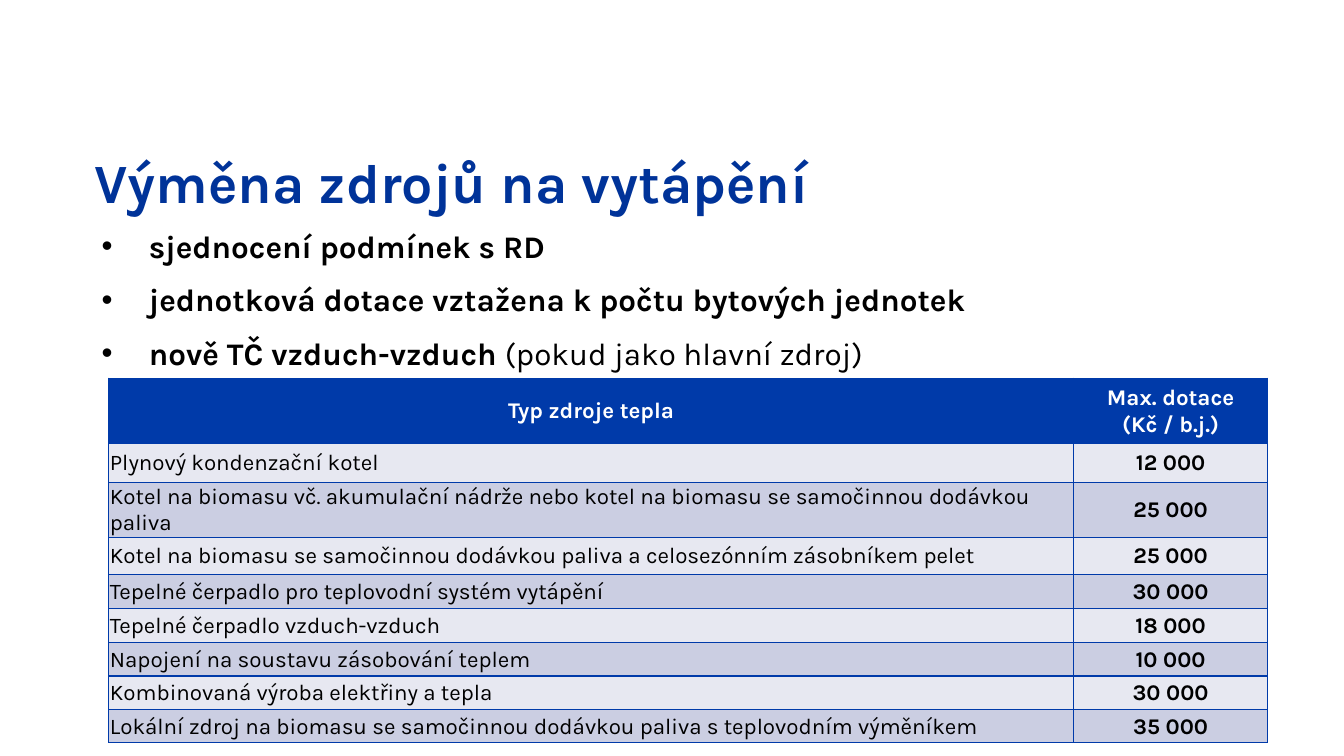
"""Builds a slide on heating source replacement with a table of grants."""
from lxml.etree import SubElement
from pptx import Presentation
from pptx.dml.color import RGBColor
from pptx.enum.text import MSO_ANCHOR as Anchor, MSO_AUTO_SIZE as AutoSize, PP_ALIGN as Align
from pptx.oxml import parse_xml
from pptx.oxml.ns import nsdecls, qn
from pptx.util import Cm, Pt

TITLE_BLUE = RGBColor(0x00, 0x33, 0x99)
TABLE_BLUE = RGBColor(0x00, 0x3A, 0xA9)
LIGHT_BAND = RGBColor(0xE7, 0xE8, 0xF1)
DARK_BAND = RGBColor(0xCB, 0xCE, 0xE2)
WHITE = RGBColor(0xFF, 0xFF, 0xFF)
BLACK = RGBColor(0x00, 0x00, 0x00)


def set_font(font, size, color, bold):
    for key, value in {"name": "Karla", "size": Pt(size), "bold": bold}.items():
        setattr(font, key, value)
    font.color.rgb = color


def add_borders(cell):
    for index, side in enumerate(("lnL", "lnR", "lnT", "lnB")):
        border = parse_xml(
            f'<a:{side} {nsdecls("a")} w="{Pt(1)}"><a:solidFill>'
            f'<a:srgbClr val="{TABLE_BLUE}"/></a:solidFill></a:{side}>'
        )
        cell._tc.get_or_add_tcPr().insert(index, border)


prs = Presentation()
prs.slide_width, prs.slide_height = Cm(33.87), Cm(19.05)
slide = prs.slides.add_slide(prs.slide_layouts[5])

heading = slide.shapes.title
heading_place = {"left": Cm(2.13), "top": Cm(3.6), "width": Cm(29.21), "height": Cm(1.4)}
for key, value in heading_place.items():
    setattr(heading, key, value)
heading.text_frame.text = "Výměna zdrojů na vytápění"
heading_format = {"vertical_anchor": Anchor.TOP, "auto_size": AutoSize.NONE, "word_wrap": True}
for key, value in heading_format.items():
    setattr(heading.text_frame, key, value)
heading_line = heading.text_frame.paragraphs[0]
heading_line.alignment = Align.LEFT
set_font(heading_line.runs[0].font, 39.6, TITLE_BLUE, True)

conditions = [
    ("sjednocení podmínek s RD", ""),
    ("jednotková dotace vztažena k počtu bytových jednotek", ""),
    ("nově TČ vzduch-vzduch", " (pokud jako hlavní zdroj)"),
]
conditions_frame = slide.shapes.add_textbox(Cm(2.31), Cm(5.6), Cm(29.21), Cm(3.99)).text_frame
conditions_frame.word_wrap = True
for index, (key_point, remark) in enumerate(conditions):
    line = conditions_frame.add_paragraph() if index else conditions_frame.paragraphs[0]
    line_properties = line._p.get_or_add_pPr()
    line_properties.set("marL", str(Cm(1.19)))
    line_properties.set("indent", str(-Cm(1.19)))
    SubElement(line_properties, qn("a:buFont"), typeface="Arial")
    SubElement(line_properties, qn("a:buChar"), char="•")
    line.space_before = Pt(5.3 if index else 0)
    line.space_after = Pt(6)
    for text, bold in ((key_point, True), (remark, False)):
        if text:
            run = line.add_run()
            run.text = text
            set_font(run.font, 22.4, BLACK, bold)

grants = [
    ("Typ zdroje tepla", "Max. dotace\v(Kč / b.j.)"),
    ("Plynový kondenzační kotel", "12 000"),
    ("Kotel na biomasu vč. akumulační nádrže nebo kotel na biomasu "
     "se samočinnou dodávkou paliva", "25 000"),
    ("Kotel na biomasu se samočinnou dodávkou paliva a celosezónním zásobníkem pelet", "25 000"),
    ("Tepelné čerpadlo pro teplovodní systém vytápění", "30 000"),
    ("Tepelné čerpadlo vzduch-vzduch", "18 000"),
    ("Napojení na soustavu zásobování teplem", "10 000"),
    ("Kombinovaná výroba elektřiny a tepla", "30 000"),
    ("Lokální zdroj na biomasu se samočinnou dodávkou paliva s teplovodním výměníkem", "35 000"),
]
row_heights = [1.65, 0.97, 0.99, 0.94, 0.86, 0.86, 0.84, 0.84, 0.84]
cell_format = {
    "margin_left": Cm(0.03),
    "margin_right": Cm(0.03),
    "margin_top": Cm(0.03),
    "margin_bottom": 0,
    "vertical_anchor": Anchor.MIDDLE,
}
grant_table = slide.shapes.add_table(
    len(grants), 2, Cm(2.74), Cm(9.53), Cm(29.21), Cm(sum(row_heights))
).table
for column, width in zip(grant_table.columns, (24.31, 4.9)):
    column.width = Cm(width)

for row_index, (grant, height) in enumerate(zip(grants, row_heights)):
    grant_table.rows[row_index].height = Cm(height)
    is_header = row_index == 0
    band = TABLE_BLUE if is_header else LIGHT_BAND if row_index % 2 else DARK_BAND
    for column_index, text in enumerate(grant):
        emphasized = is_header or column_index == 1
        cell = grant_table.cell(row_index, column_index)
        for key, value in cell_format.items():
            setattr(cell, key, value)
        cell.fill.solid()
        cell.fill.fore_color.rgb = band
        add_borders(cell)
        entry = cell.text_frame.paragraphs[0]
        entry.text = text
        entry.alignment = Align.CENTER if emphasized else Align.LEFT
        for run in entry.runs:
            set_font(run.font, 16, WHITE if is_header else BLACK, emphasized)

prs.save("out.pptx")
